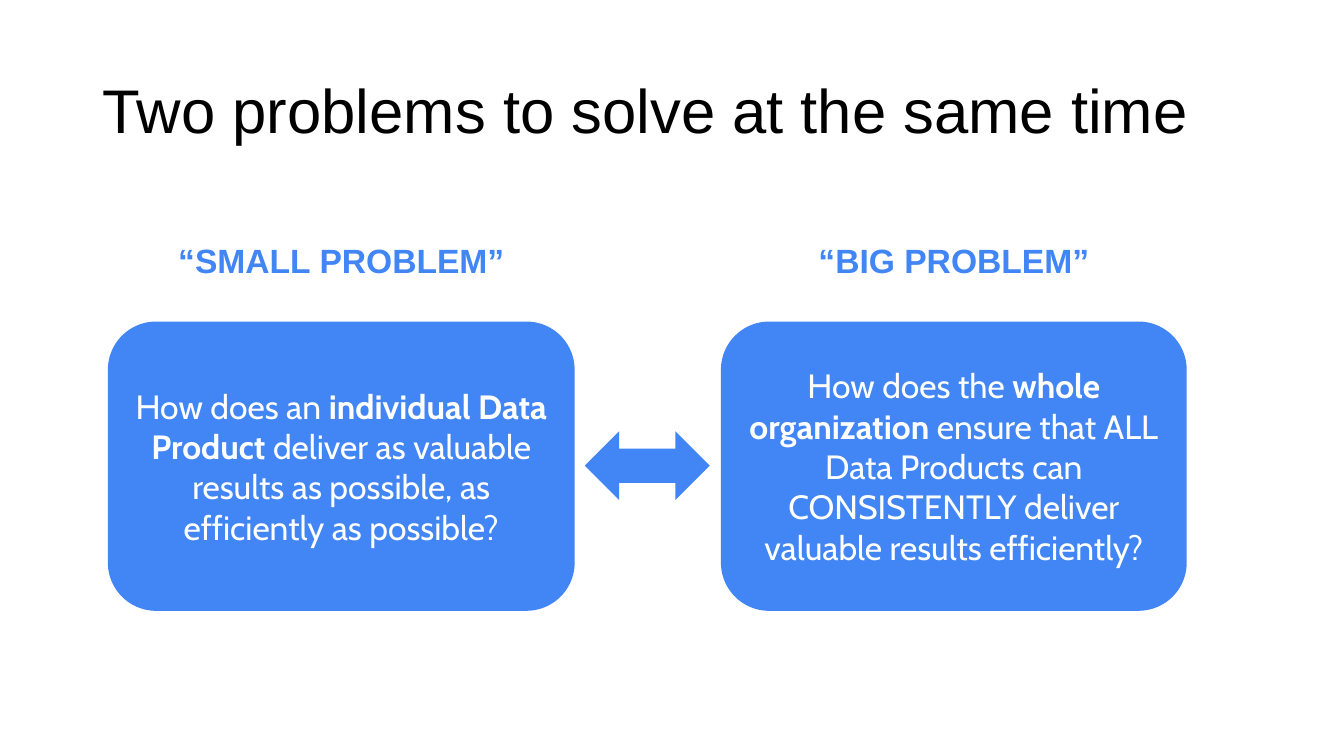
from pptx import Presentation
from pptx.dml.color import RGBColor
from pptx.enum.shapes import MSO_SHAPE
from pptx.enum.text import MSO_ANCHOR, PP_ALIGN
from pptx.util import Pt

PX = 9144  # 100 px to the inch
BLUE = RGBColor(0x42, 0x85, 0xF4)
WHITE = RGBColor(0xFF, 0xFF, 0xFF)
BLACK = RGBColor(0, 0, 0)
ROUND = MSO_SHAPE.ROUNDED_RECTANGLE
ARROW = MSO_SHAPE.LEFT_RIGHT_ARROW
LEFT, CENTER = PP_ALIGN.LEFT, PP_ALIGN.CENTER
MIDDLE, BOTTOM = MSO_ANCHOR.MIDDLE, MSO_ANCHOR.BOTTOM

SMALL = [
    ("How does an ", False),
    ("individual Data Product", True),
    (" deliver as valuable results as possible, as efficiently as possible?", False),
]
BIG = [
    ("How does the ", False),
    ("whole organization ", True),
    ("ensure that ALL Data Products can CONSISTENTLY deliver "
     "valuable results efficiently?", False),
]


def emu(box):
    return [n * PX for n in box]


def write(shape, runs, size=24, font="Arial", color=BLACK,
          align=CENTER, anchor=MIDDLE, line=1.0):
    """Fill a shape with one paragraph of (text, bold) runs."""
    frame = shape.text_frame
    frame.word_wrap = True
    frame.vertical_anchor = anchor
    para = frame.paragraphs[0]
    para.alignment = align
    para.line_spacing = line
    for text, bold in runs:
        run = para.add_run()
        run.text = text
        run.font.size = Pt(size)
        run.font.name = font
        run.font.bold = bold
        run.font.color.rgb = color


def add_text(slide, box, runs, **style):
    write(slide.shapes.add_textbox(*emu(box)), runs, **style)


def add_solid(slide, kind, box):
    shape = slide.shapes.add_shape(kind, *emu(box))
    shape.shadow.inherit = False
    shape.fill.solid()
    shape.fill.fore_color.rgb = BLUE
    shape.line.fill.background()
    return shape


def add_problem(slide, box, head, runs, inset=0):
    """Place a card in the box and its heading above it."""
    left, top, width, _ = box
    add_text(slide, (left + inset, top - 126, width - 2 * inset, 90),
             [(head, True)], color=BLUE, anchor=BOTTOM)
    write(add_solid(slide, ROUND, box), runs, font="Cabin", color=WHITE)


def add_arrow(slide, box):
    add_solid(slide, ARROW, box)


def main():
    deck = Presentation()
    deck.slide_width, deck.slide_height = emu((1333, 750))
    slide = deck.slides.add_slide(deck.slide_layouts[6])
    add_text(slide, (92, 40, 1150, 145),
             [("Two problems to solve at the same time", False)],
             size=44, align=LEFT, line=0.9)
    add_problem(slide, (107, 319, 463, 287), "“SMALL PROBLEM”", SMALL, inset=24)
    add_problem(slide, (715, 319, 462, 287), "“BIG PROBLEM”", BIG)
    add_arrow(slide, (580, 428, 124, 68))
    deck.save("out.pptx")


if __name__ == "__main__":
    main()
